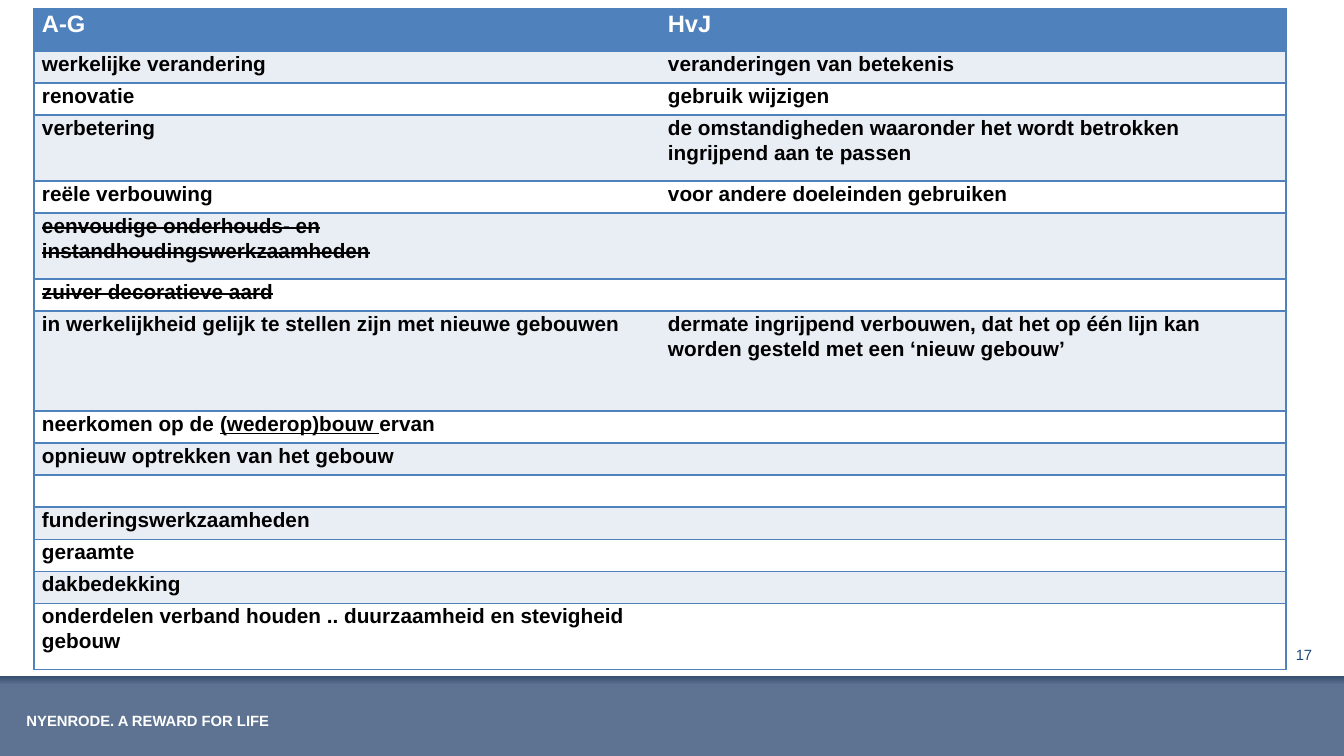
import pptx
import pptx.util
import pptx.dml.color
import pptx.enum.shapes
import pptx.enum.text
import pptx.oxml
import pptx.oxml.ns

RGB = pptx.dml.color.RGBColor
WHITE, BLACK = RGB(255, 255, 255), RGB(0, 0, 0)
BLUE, BAND = RGB(0x4F, 0x81, 0xBD), RGB(0xE9, 0xED, 0xF4)
NAVY, SLATE = RGB(0x34, 0x4E, 0x6E), RGB(0x5E, 0x72, 0x91)
NUMBER = RGB(0x1F, 0x49, 0x7D)
ANCHOR, ALIGN = pptx.enum.text.MSO_ANCHOR, pptx.enum.text.PP_ALIGN
FONT = "Arial"
W, H = 1344, 756

# Height, left and right cell; a cell is a list of (text, style) runs
ROWS = [
    (42, [("A-G", "")], [("HvJ", "")]),
    (32, [("werkelijke verandering", "")], [("veranderingen van betekenis", "")]),
    (32, [("renovatie", "")], [("gebruik wijzigen", "")]),
    (66, [("verbetering", "")],
     [("de omstandigheden waaronder het wordt betrokken ingrijpend aan te passen", "")]),
    (32, [("reële verbouwing", "")], [("voor andere doeleinden gebruiken", "")]),
    (66, [("eenvoudige onderhouds- en instandhoudingswerkzaamheden", "strike")], []),
    (32, [("zuiver decoratieve aard", "strike")], []),
    (100, [("in werkelijkheid gelijk te stellen zijn met nieuwe gebouwen", "")],
     [("dermate ingrijpend verbouwen, dat het op één lijn kan worden gesteld "
       "met een ‘nieuw gebouw’", "")]),
    (32, [("neerkomen op de ", ""), ("(wederop)bouw ", "underline"), ("ervan", "")], []),
    (32, [("opnieuw optrekken van het gebouw", "")], []),
    (32, [], []),
    (32, [("funderingswerkzaamheden", "")], []),
    (32, [("geraamte", "")], []),
    (32, [("dakbedekking", "")], []),
    (66, [("onderdelen verband houden .. duurzaamheid en stevigheid gebouw", "")], []),
]


def px(n):
    return pptx.util.Emu(int(n * 8572.5))


def add_run(p, text, size, color, bold=False, style=""):
    r = p.add_run()
    r.text = text
    r.font.name, r.font.size, r.font.bold = FONT, pptx.util.Pt(size), bold
    r.font.color.rgb = color
    if style == "underline":
        r.font.underline = True
    elif style == "strike":
        r.font._element.set("strike", "sngStrike")


def add_label(s, box, text, color, bold=False, anchor=ANCHOR.TOP, align=ALIGN.LEFT):
    tf = s.shapes.add_textbox(*map(px, box)).text_frame
    tf.word_wrap, tf.vertical_anchor = True, anchor
    tf.paragraphs[0].alignment = align
    add_run(tf.paragraphs[0], text, 10, color, bold)


def set_borders(cell, hidden):
    """Line every side of the cell except the hidden one."""
    for side in ("lnL", "lnR", "lnT", "lnB"):
        fill = ("<a:noFill/>" if side == hidden else
                f'<a:solidFill><a:srgbClr val="{BLUE}"/></a:solidFill>')
        cell._tc.get_or_add_tcPr().append(pptx.oxml.parse_xml(
            f'<a:{side} {pptx.oxml.ns.nsdecls("a")} w="12700">{fill}</a:{side}>'))


def fill_cell(cell, runs, row, col):
    set_borders(cell, "lnL" if col else "lnR")
    cell.fill.solid()
    cell.fill.fore_color.rgb = BLUE if row == 0 else BAND if row % 2 else WHITE
    cell.margin_left = cell.margin_right = px(8)
    cell.margin_top = cell.margin_bottom = 0
    p = cell.text_frame.paragraphs[0]
    if runs:
        p.line_spacing = 1.07
    for text, style in runs:
        add_run(p, text, 14 if row else 16, BLACK if row else WHITE, True, style)


def add_comparison(s, x, y, w):
    height = sum(row[0] for row in ROWS)
    table = s.shapes.add_table(len(ROWS), 2, px(x), px(y), px(w), px(height)).table
    for column in table.columns:
        column.width = px(w / 2)
    for i, (h, *cells) in enumerate(ROWS):
        table.rows[i].height = px(h)
        for j, runs in enumerate(cells):
            fill_cell(table.cell(i, j), runs, i, j)


def add_footer(s, x, y, w, h):
    # Shaded band
    bar = s.shapes.add_shape(pptx.enum.shapes.MSO_SHAPE.RECTANGLE,
                             px(x), px(y), px(w), px(h))
    bar.shadow.inherit = False
    bar.line.fill.background()
    bar.fill.gradient()
    bar.fill.gradient_angle = 270
    for stop, position, color in zip(bar.fill.gradient_stops, (0, 0.11), (NAVY, SLATE)):
        stop.position, stop.color.rgb = position, color
    # Motto and page number
    add_label(s, (x + 16, y + 30, 497, 29), "NYENRODE. A REWARD FOR LIFE", WHITE, True)
    add_label(s, (x + w - 74, y - 36, 68, 29), "17", NUMBER,
              anchor=ANCHOR.MIDDLE, align=ALIGN.CENTER)


def main():
    prs = pptx.Presentation()
    prs.slide_width, prs.slide_height = px(W), px(H)
    s = prs.slides.add_slide(prs.slide_layouts[6])
    add_footer(s, 0, 676, W, 80)
    add_comparison(s, 34, 9, 1252)
    prs.save("out.pptx")


if __name__ == "__main__":
    main()
